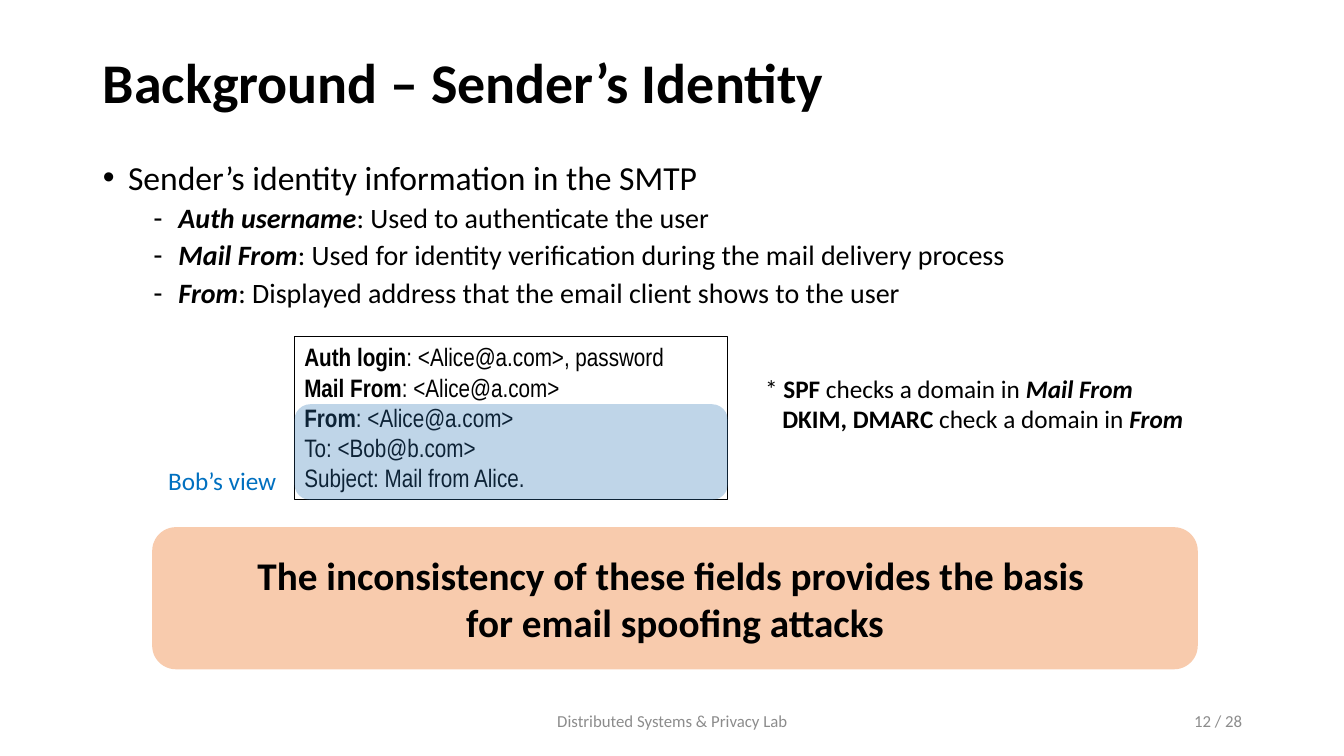
from pptx import Presentation
from pptx.dml.color import RGBColor
from pptx.enum.shapes import MSO_SHAPE
from pptx.enum.text import MSO_ANCHOR, MSO_AUTO_SIZE, PP_ALIGN
from pptx.oxml.ns import qn
from pptx.util import Inches, Pt
from lxml.etree import SubElement

# Content: each line is a list of (text, style) runs; b = bold, i = italic
TITLE = [[("Background – Sender’s Identity", "b")]]
BODY = [
    [("Sender’s identity information in the SMTP", "")],
    [("Auth username", "bi"), (": Used to authenticate the user", "")],
    [("Mail From", "bi"),
     (": Used for identity verification during the mail delivery process", "")],
    [("From", "bi"),
     (": Displayed address that the email client shows to the user", "")],
]
MAIL = [
    [("Auth login", "b"), (": <Alice@a.com>, password", "")],
    [("Mail From", "b"), (": <Alice@a.com>", "")],
    [("From", "b"), (": <Alice@a.com>", "")],
    [("To: <Bob@b.com>", "")],
    [("Subject: Mail from Alice.", "")],
]
NOTE = [
    [("* ", ""), ("SPF", "b"), (" checks a domain in ", ""), ("Mail From", "bi")],
    [("DKIM, DMARC", "b"), (" check a domain in ", ""), ("From", "bi")],
]
VIEW = [[("Bob’s view", "")]]
CLAIM = [
    [("The inconsistency of these fields provides the basis ", "b")],
    [("for email spoofing attacks", "b")],
]
LAB = [[("Distributed Systems & Privacy Lab", "")]]
PAGE = [[("12 / 28", "")]]

HUES = {"ink": "000000", "gray": "8C8C8C", "blue": "0070C0",
        "veil": "2E75B6", "peach": "F8CBAD"}
LEVELS = [(24, 0.25, 10, "•"), (20, 0.75, 5, "-")]  # size, indent, gap, bullet
HANG = 0.25


def hue(name):
    return RGBColor.from_string(HUES[name])


def write(shape, lines, size, color="ink", font="Calibri",
          align=PP_ALIGN.LEFT, anchor=MSO_ANCHOR.TOP):
    frame = shape.text_frame
    frame.word_wrap = True
    frame.auto_size = MSO_AUTO_SIZE.NONE
    frame.vertical_anchor = anchor
    for n, line in enumerate(lines):
        para = frame.paragraphs[0] if n == 0 else frame.add_paragraph()
        para.alignment = align
        for text, style in line:
            run = para.add_run()
            run.text = text
            face = run.font
            face.name, face.size = font, Pt(size)
            face.bold, face.italic = "b" in style, "i" in style
            face.color.rgb = hue(color)
    return frame.paragraphs


def place(shape, box):
    shape.left, shape.top, shape.width, shape.height = map(Inches, box)
    return shape


def label(box, lines, size, **style):
    return write(slide.shapes.add_textbox(*map(Inches, box)), lines, size, **style)


def panel(kind, box, fill=None):
    shape = slide.shapes.add_shape(kind, *map(Inches, box))
    shape.shadow.inherit = False
    shape.line.fill.background()
    if fill:
        shape.fill.solid()
        shape.fill.fore_color.rgb = hue(fill)
    else:
        shape.fill.background()
    return shape


deck = Presentation()
deck.slide_width, deck.slide_height = Inches(13.33), Inches(7.5)
slide = deck.slides.add_slide(deck.slide_layouts[1])
EDGE, WIDE = 0.92, 11.5

# Title
head = place(slide.shapes.title, (EDGE, 0.4, WIDE, 0.89))
write(head, TITLE, 40, anchor=MSO_ANCHOR.MIDDLE)[0].line_spacing = 0.9

# Bullet list
body = place(slide.placeholders[1], (EDGE, 1.55, WIDE, 5.21))
for n, para in enumerate(write(body, BODY, 20)):
    para.level = min(n, 1)
    size, indent, gap, mark = LEVELS[para.level]
    para.line_spacing, para.space_before = 0.9, Pt(gap)
    for run in para.runs:
        run.font.size = Pt(size)
    props = para._p.get_or_add_pPr()
    props.set("marL", str(Inches(indent)))
    props.set("indent", str(-Inches(HANG)))
    SubElement(props, qn("a:buFont")).set("typeface", "Arial")
    SubElement(props, qn("a:buChar")).set("char", mark)

# Mail message and the side note
LEFT, TOP, SPAN, TALL, SEEN = 2.92, 3.34, 4.3, 1.62, 0.95
mail = panel(MSO_SHAPE.RECTANGLE, (LEFT, TOP, SPAN, TALL))
mail.line.color.rgb, mail.line.width = hue("ink"), Pt(0.75)
write(mail, MAIL, 18, font="Arial Narrow")
note = label((7.49, 3.65, 4.51, 0.71), NOTE, 18)
note[1]._p.get_or_add_pPr().set("marL", str(Inches(0.17)))

# Translucent band over the part Bob sees
veil = panel(MSO_SHAPE.ROUNDED_RECTANGLE,
             (LEFT, TOP + TALL - SEEN, SPAN, SEEN), "veil")
tint = veil.fill._xPr.find(qn("a:solidFill"))[0]
SubElement(tint, qn("a:alpha")).set("val", "30000")
label((1.57, 4.57, 1.61, 0.4), VIEW, 18, color="blue")

# Closing claim
claim = panel(MSO_SHAPE.ROUNDED_RECTANGLE, (1.51, 5.23, 10.37, 1.41), "peach")
write(claim, CLAIM, 28, align=PP_ALIGN.CENTER, anchor=MSO_ANCHOR.MIDDLE)

# Footer
for left, width, lines, align in [(4.42, 4.5, LAB, PP_ALIGN.CENTER),
                                  (9.42, 3, PAGE, PP_ALIGN.RIGHT)]:
    label((left, 6.95, width, 0.4), lines, 12, color="gray",
          align=align, anchor=MSO_ANCHOR.MIDDLE)

deck.save("out.pptx")
